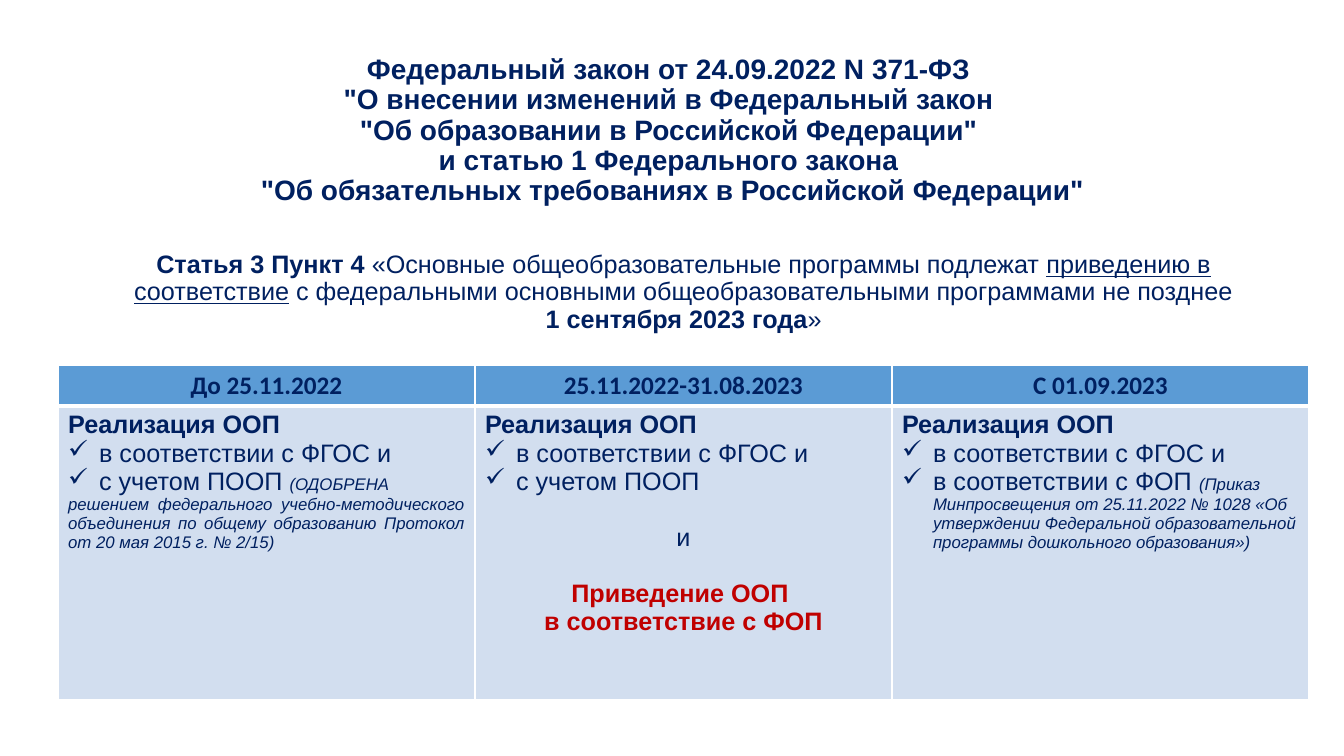
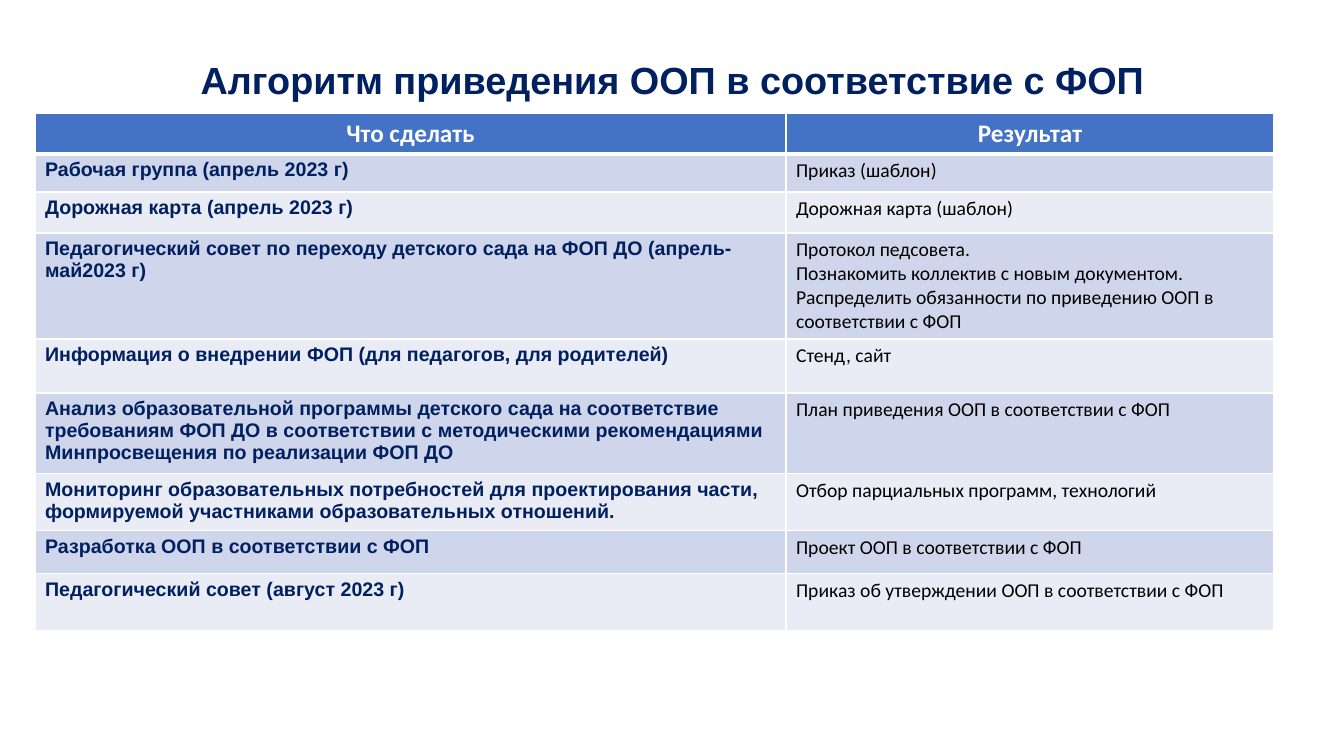
"""Build two slides on aligning preschool programmes with the federal programme."""
from dataclasses import dataclass, replace
from typing import Optional, Sequence

from lxml.etree import SubElement
from pptx import Presentation
from pptx.dml.color import RGBColor
from pptx.enum.text import MSO_ANCHOR as Anchor, PP_ALIGN as Align
from pptx.oxml.ns import qn
from pptx.slide import Slide
from pptx.table import _Cell as Cell
from pptx.text.text import TextFrame, _Paragraph as Paragraph
from pptx.util import Emu, Pt

PX_PER_INCH = 100.8
NAVY = RGBColor(0x00, 0x20, 0x60)
RED = RGBColor(0xC0, 0x00, 0x00)
BLACK = RGBColor(0x00, 0x00, 0x00)
WHITE = RGBColor(0xFF, 0xFF, 0xFF)
STAGE_HEAD = RGBColor(0x5B, 0x9B, 0xD5)
STAGE_FILL = RGBColor(0xD2, 0xDE, 0xEF)
STEP_HEAD = RGBColor(0x44, 0x72, 0xC4)
STEP_BANDS = (RGBColor(0xCF, 0xD5, 0xEA), RGBColor(0xE9, 0xEB, 0xF5))
BULLET_INDENT = 31
THIN, THICK = 1, 3


@dataclass(frozen=True)
class Span:
    text: str
    size: int = 18
    font: str = "Arial"
    color: RGBColor = NAVY
    bold: bool = False
    italic: bool = False
    underline: bool = False


@dataclass(frozen=True)
class Line:
    spans: Sequence[Span]
    align: Align = Align.LEFT
    bullet: bool = False
    before: int = 0
    spacing: Optional[float] = None


@dataclass(frozen=True)
class CellText:
    lines: Sequence[Line]
    fill: RGBColor


def px(length: int) -> Emu:
    """Turn pixels into EMU."""
    return Emu(round(length * 914400 / PX_PER_INCH))


def line(text: str, *, align: Align = Align.LEFT, bullet: bool = False,
         before: int = 0, spacing: Optional[float] = None, **style) -> Line:
    """Make a line of one span from its text and format."""
    return Line([Span(text, **style)], align, bullet, before, spacing)


def add_span(para: Paragraph, span: Span) -> None:
    """Append a formatted span, with a line break at each newline."""
    for index, part in enumerate(span.text.split("\n")):
        if index:
            para.add_line_break()
        if not part:
            continue
        run = para.add_run()
        run.text = part
        font = run.font
        font.size, font.name = Pt(span.size), span.font
        font.bold, font.italic, font.underline = span.bold, span.italic, span.underline
        font.color.rgb = span.color


def write_lines(frame: TextFrame, lines: Sequence[Line]) -> None:
    """Fill a text frame with lines."""
    for index, item in enumerate(lines):
        para = frame.add_paragraph() if index else frame.paragraphs[0]
        para.alignment = item.align
        if item.spacing:
            para.line_spacing = item.spacing
        if item.before:
            para.space_before = Pt(item.before)
        if item.bullet:
            properties = para._p.get_or_add_pPr()
            properties.set("marL", str(px(BULLET_INDENT)))
            properties.set("indent", str(-px(BULLET_INDENT)))
            SubElement(properties, qn("a:buChar")).set("char", "✓")
        for span in item.spans:
            add_span(para, span)


def add_text(page: Slide, left: int, top: int, width: int, height: int,
             content: Line, anchor: Anchor = Anchor.TOP) -> None:
    """Place a wrapped text box."""
    frame = page.shapes.add_textbox(px(left), px(top), px(width), px(height)).text_frame
    frame.word_wrap = True
    frame.vertical_anchor = anchor
    write_lines(frame, [content])


def add_title(page: Slide, text: str, height: int, size: int,
              spacing: Optional[float] = None) -> None:
    """Place the centred slide title."""
    title = line(text, align=Align.CENTER, spacing=spacing, size=size, bold=True)
    add_text(page, 93, 40, 1159, height, title, Anchor.MIDDLE)


def set_borders(cell: Cell, top: int, bottom: int) -> None:
    """Draw white borders around a cell."""
    properties = cell._tc.get_or_add_tcPr()
    for side, width in (("L", THIN), ("R", THIN), ("T", top), ("B", bottom)):
        border = SubElement(properties, qn(f"a:ln{side}"))
        border.set("w", str(Pt(width)))
        fill = SubElement(border, qn("a:solidFill"))
        SubElement(fill, qn("a:srgbClr")).set("val", str(WHITE))


def add_grid(page: Slide, left: int, top: int, widths: Sequence[int],
             heights: Sequence[int], rows: Sequence[Sequence[CellText]]) -> None:
    """Place a table whose first row is a header."""
    table = page.shapes.add_table(len(heights), len(widths), px(left), px(top),
                                  px(sum(widths)), px(sum(heights))).table
    for column, width in zip(table.columns, widths):
        column.width = px(width)
    for index, (height, row) in enumerate(zip(heights, rows)):
        table.rows[index].height = px(height)
        for cell, content in zip(table.rows[index].cells, row):
            set_borders(cell, THICK if index == 1 else THIN, THIN if index else THICK)
            cell.fill.solid()
            cell.fill.fore_color.rgb = content.fill
            write_lines(cell.text_frame, content.lines)


def header_row(labels: Sequence[str], color: RGBColor, fill: RGBColor) -> list[CellText]:
    """Make the centred header cells."""
    return [CellText([line(label, align=Align.CENTER, font="Calibri", color=color, bold=True)],
                     fill) for label in labels]


def stage_lines(basis: str, note: str = "", align: Align = Align.LEFT) -> list[Line]:
    """Make the heading and two ticked lines of a stage."""
    spans = [Span(basis)] + ([Span(note, size=12, italic=True)] if note else [])
    return [line("Реализация ООП", align=align, bold=True),
            line("в соответствии с ФГОС и", align=align, bullet=True),
            Line(spans, align, bullet=True)]


def build_law_page(page: Slide) -> None:
    """Draw the law and its three stages."""
    add_title(page, "Федеральный закон от 24.09.2022 N 371-ФЗ \n"
                    "\"О внесении изменений в Федеральный закон \n"
                    "\"Об образовании в Российской Федерации\" \n"
                    "и статью 1 Федерального закона \n"
                    "\"Об обязательных требованиях в Российской Федерации\"", 182, 20, 0.9)
    plain = Span("«Основные общеобразовательные программы подлежат ")
    strong = Span("Статья 3 Пункт 4 ", bold=True)
    article = [strong, plain,
               replace(plain, text="приведению в соответствие", underline=True),
               replace(plain, text=" с федеральными основными общеобразовательными "
                                   "программами не позднее\n"),
               replace(strong, text="1 сентября 2023 года"),
               replace(plain, text="»")]
    add_text(page, 79, 247, 1209, 110, Line(article, Align.CENTER, spacing=0.9))

    before = stage_lines("с учетом ПООП ", "(ОДОБРЕНА", Align.JUSTIFY)
    before.append(line("решением федерального учебно-методического объединения по общему "
                       "образованию Протокол от 20 мая 2015 г. № 2/15)",
                       align=Align.JUSTIFY, size=12, italic=True))
    between = stage_lines("с учетом ПООП") + [
        line("и", align=Align.CENTER, before=20),
        line("Приведение ООП \nв соответствие с ФОП", align=Align.CENTER, before=20,
             color=RED, bold=True)]
    after = stage_lines("в соответствии с ФОП ",
                        "(Приказ Минпросвещения от 25.11.2022 № 1028 «Об утверждении "
                        "Федеральной образовательной программы дошкольного образования»)")
    add_grid(page, 58, 365, [417] * 3, [41, 294], [
        header_row(["До 25.11.2022", "25.11.2022-31.08.2023", "С 01.09.2023"],
                   NAVY, STAGE_HEAD),
        [CellText(lines, STAGE_FILL) for lines in (before, between, after)]])


def build_steps_page(page: Slide) -> None:
    """Draw the table of steps and results."""
    add_title(page, "Алгоритм приведения ООП в соответствие с ФОП", 78, 27)
    steps = [
        (38, "Рабочая группа (апрель 2023 г)", ["Приказ (шаблон)"]),
        (41, "Дорожная карта (апрель 2023 г)", ["Дорожная карта (шаблон)"]),
        (106, "Педагогический совет по переходу детского сада на ФОП ДО (апрель-май2023 г)",
         ["Протокол педсовета.",
          "Познакомить коллектив с новым документом. Распределить обязанности по "
          "приведению ООП в соответствии с ФОП"]),
        (54, "Информация о внедрении ФОП (для педагогов, для родителей)", ["Стенд, сайт"]),
        (76, "Анализ образовательной программы детского сада на соответствие требованиям "
             "ФОП ДО в соответствии с методическими рекомендациями Минпросвещения по "
             "реализации ФОП ДО", ["План приведения ООП в соответствии с ФОП"]),
        (56, "Мониторинг образовательных потребностей для проектирования части, "
             "формируемой участниками образовательных отношений.",
         ["Отбор парциальных программ, технологий"]),
        (43, "Разработка ООП в соответствии с ФОП", ["Проект ООП в соответствии с ФОП"]),
        (57, "Педагогический совет (август 2023 г)",
         ["Приказ об утверждении ООП в соответствии с ФОП"]),
    ]
    rows = [header_row(["Что сделать", "Результат"], WHITE, STEP_HEAD)]
    for index, (_, step, results) in enumerate(steps):
        fill = STEP_BANDS[index % 2]
        rows.append([
            CellText([line(step, size=14, bold=True)], fill),
            CellText([line(result, size=14, font="Calibri", color=BLACK)
                      for result in results], fill)])
    add_grid(page, 35, 113, [751, 488], [41] + [height for height, _, _ in steps], rows)


def main() -> None:
    """Build and save the deck."""
    deck = Presentation()
    deck.slide_width, deck.slide_height = px(1344), px(756)
    blank = deck.slide_layouts[6]
    for build in (build_law_page, build_steps_page):
        build(deck.slides.add_slide(blank))
    deck.save("out.pptx")


if __name__ == "__main__":
    main()
